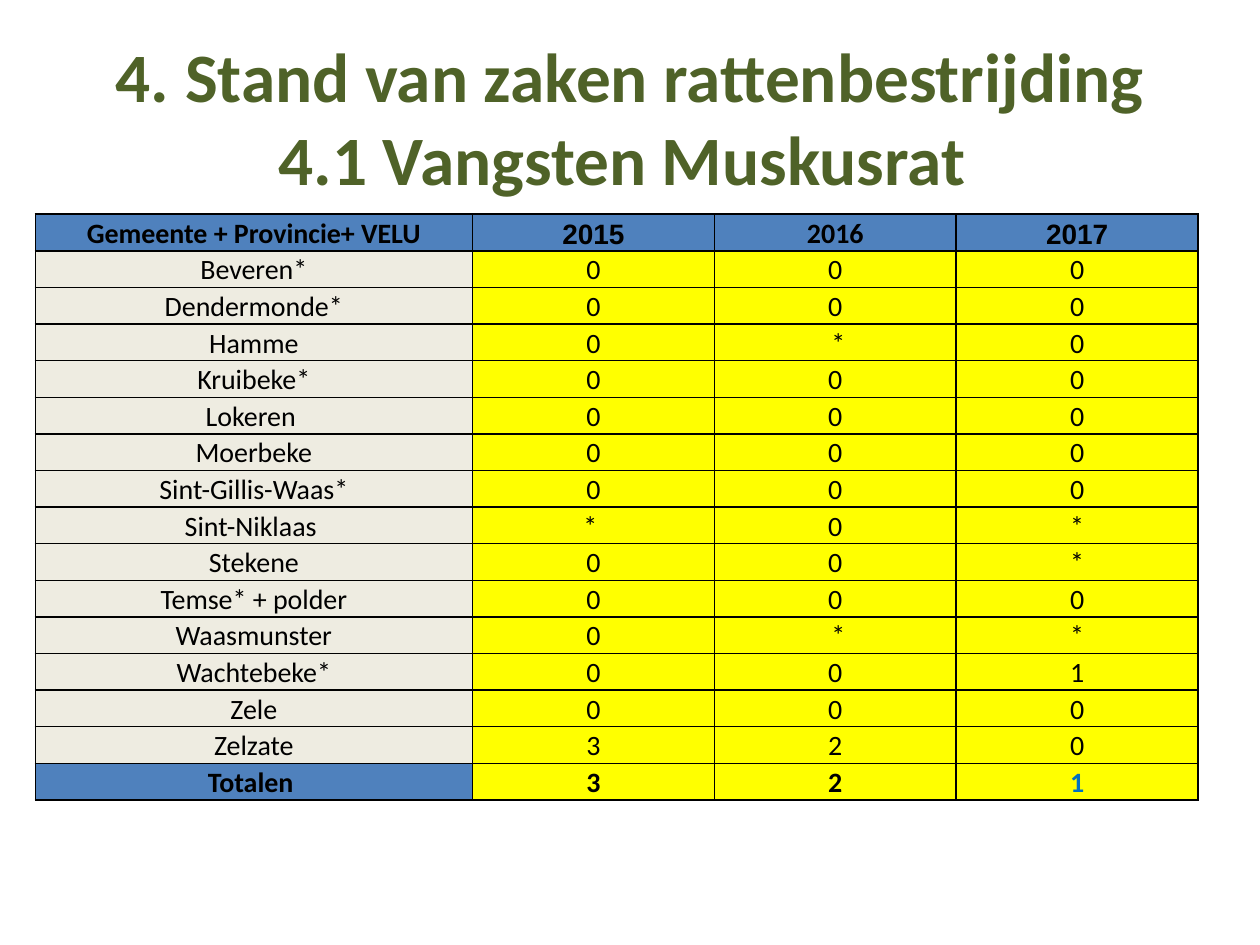
import pptx
import pptx.util
import pptx.dml.color
import pptx.enum.text
import pptx.oxml
import pptx.oxml.ns

RGBColor = pptx.dml.color.RGBColor
OLIVE = RGBColor(0x4F, 0x62, 0x28)
BLACK = RGBColor(0, 0, 0)
BLUE = RGBColor(0x4F, 0x81, 0xBD)
CREAM = RGBColor(0xEE, 0xEC, 0xE1)
YELLOW = RGBColor(0xFF, 0xFF, 0)
ACCENT = RGBColor(0x00, 0x70, 0xC0)

SLIDE_WIDTH = pptx.util.Inches(10)
SLIDE_HEIGHT = pptx.util.Inches(7.5)
NAME_WIDTH = pptx.util.Inches(3.47)
YEAR_WIDTH = pptx.util.Inches(1.92)
ROW_HEIGHT = pptx.util.Inches(4.65 / 16)

CATCHES = [
    ("Gemeente + Provincie+ VELU", "2015", "2016", "2017"),
    ("Beveren*", "0", "0", "0"),
    ("Dendermonde*", "0", "0", "0"),
    ("Hamme", "0", " *", "0"),
    ("Kruibeke*", "0", "0", "0"),
    ("Lokeren ", "0", "0", "0"),
    ("Moerbeke", "0", "0", "0"),
    ("Sint-Gillis-Waas*", "0", "0", "0"),
    ("Sint-Niklaas ", "* ", "0", "*"),
    ("Stekene", "0", "0", "*"),
    ("Temse* + polder", "0", "0", "0"),
    ("Waasmunster", "0", " *", "*"),
    ("Wachtebeke*", "0", "0", "1"),
    ("Zele", "0", "0", "0"),
    ("Zelzate", "3", "2", "0"),
    ("Totalen ", "3", "2", "1"),
]


def format_text(paragraph, font_name, size, color, bold):
    paragraph.alignment = pptx.enum.text.PP_ALIGN.CENTER
    for run in paragraph.runs:
        run.font.name = font_name
        run.font.size = pptx.util.Pt(size)
        run.font.color.rgb = color
        run.font.bold = bold


def add_heading(slide):
    heading = slide.shapes.title
    heading.left = int(SLIDE_WIDTH * 0.05)
    heading.top = int(SLIDE_HEIGHT * 0.04)
    heading.width = int(SLIDE_WIDTH * 0.9)
    heading.height = pptx.util.Inches(1.25)
    frame = heading.text_frame
    frame.text = "4. Stand van zaken rattenbestrijding\v4.1 Vangsten Muskusrat "
    frame.auto_size = pptx.enum.text.MSO_AUTO_SIZE.NONE
    frame.vertical_anchor = pptx.enum.text.MSO_ANCHOR.MIDDLE
    format_text(frame.paragraphs[0], "Calibri", 39.6, OLIVE, True)


def add_borders(cell):
    properties = cell._tc.get_or_add_tcPr()
    for position, side in enumerate(("lnL", "lnR", "lnT", "lnB")):
        border = pptx.oxml.parse_xml(
            f'<a:{side} {pptx.oxml.ns.nsdecls("a")} w="{pptx.util.Pt(1)}">'
            f'<a:solidFill><a:srgbClr val="{BLACK}"/></a:solidFill></a:{side}>'
        )
        properties.insert(position, border)


def fill_cell(cell, text, fill, font_name, color, bold):
    cell.text_frame.text = text
    cell.vertical_anchor = pptx.enum.text.MSO_ANCHOR.BOTTOM
    cell.margin_left = cell.margin_right = cell.margin_top = pptx.util.Inches(0.01)
    cell.margin_bottom = 0
    cell.fill.solid()
    cell.fill.fore_color.rgb = fill
    format_text(cell.text_frame.paragraphs[0], font_name, 16, color, bold)
    add_borders(cell)


def add_catch_table(slide):
    table = slide.shapes.add_table(
        len(CATCHES), len(CATCHES[0]),
        pptx.util.Inches(0.28), pptx.util.Inches(1.7),
        NAME_WIDTH + 3 * YEAR_WIDTH, len(CATCHES) * ROW_HEIGHT,
    ).table
    table.first_row = table.horz_banding = False
    for index, column in enumerate(table.columns):
        column.width = YEAR_WIDTH if index else NAME_WIDTH
    last_row, last_column = len(CATCHES) - 1, len(CATCHES[0]) - 1
    for r, values in enumerate(CATCHES):
        table.rows[r].height = ROW_HEIGHT
        emphasized = r in (0, last_row)
        for c, value in enumerate(values):
            if r == 0 or (emphasized and c == 0):
                fill = BLUE
            else:
                fill = YELLOW if c else CREAM
            font_name = "Arial" if r == 0 and c in (1, 3) else "Calibri"
            color = ACCENT if (r, c) == (last_row, last_column) else BLACK
            fill_cell(table.cell(r, c), value, fill, font_name, color, emphasized)


def main():
    presentation = pptx.Presentation()
    presentation.slide_width = SLIDE_WIDTH
    presentation.slide_height = SLIDE_HEIGHT
    slide = presentation.slides.add_slide(presentation.slide_layouts[5])
    add_heading(slide)
    add_catch_table(slide)
    presentation.save("out.pptx")


if __name__ == "__main__":
    main()
